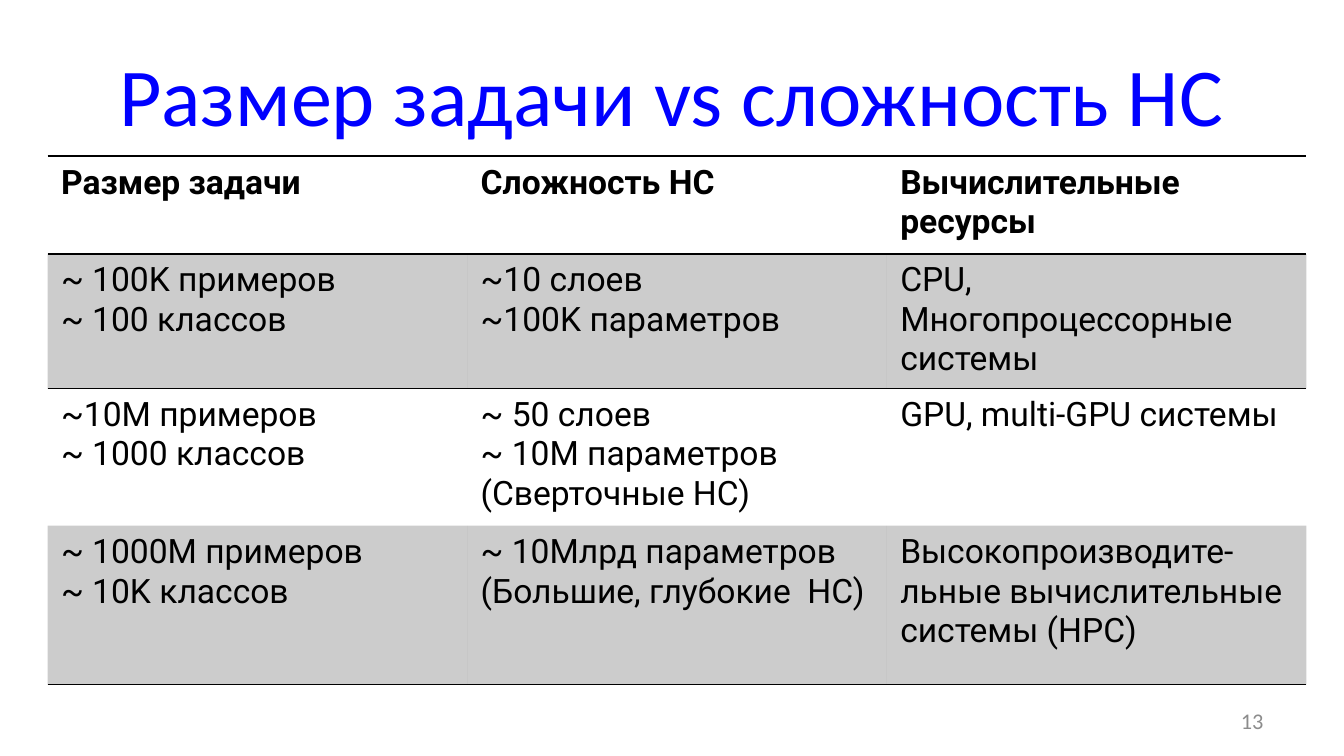
from lxml.etree import SubElement
from pptx import Presentation
from pptx.dml.color import RGBColor
from pptx.enum.text import MSO_ANCHOR, MSO_AUTO_SIZE, PP_ALIGN
from pptx.oxml import parse_xml
from pptx.oxml.ns import nsdecls, qn
from pptx.util import Cm, Pt

TITLE = "Размер задачи vs сложность НС"
PAGE_NUMBER = "13"
HEADER = [["Размер задачи"], ["Сложность НС"], ["Вычислительные ресурсы"]]
BODY = [
    [["~ 100K примеров", "~ 100 классов"],
     ["~10 слоев", "~100K параметров"],
     ["CPU,", "Многопроцессорные системы"]],
    [["~10M примеров", "~ 1000 классов"],
     ["~ 50 слоев", "~ 10M параметров", "(Сверточные НС)"],
     ["GPU, multi-GPU системы"]],
    [["~ 1000M примеров", "~ 10K классов"],
     ["~ 10Mлрд параметров", "(Большие, глубокие  НС)"],
     ["Высокопроизводите-льные вычислительные системы (HPC)"]],
]
ROWS = [HEADER] + BODY
ROW_HEIGHTS = [1.85, 2.54, 2.59, 3.0]
COLUMN_WIDTH = 7.93
BLACK, BLUE, GREY = "000000", "0000FF", "8C8C8C"
BAND_OPACITY = 20
NO_STYLE = "{2D5ABB26-0587-4C30-8999-92F81FD0307C}"


def write(text_frame, lines, font, size, color, bold=False, align=PP_ALIGN.LEFT):
    for index, line in enumerate(lines):
        paragraph = text_frame.add_paragraph() if index else text_frame.paragraphs[0]
        paragraph.alignment = align
        run = paragraph.add_run()
        run.text = line
        run.font.name = font
        run.font.size = Pt(size)
        run.font.bold = bold
        run.font.color.rgb = RGBColor.from_string(color)


def place(shape, left, top, width, height):
    shape.left, shape.top = Cm(left), Cm(top)
    shape.width, shape.height = Cm(width), Cm(height)


def add_rule(cell, side):
    """Draw a 1 pt black border on one side, "T" or "B"; call before filling."""
    cell._tc.get_or_add_tcPr().append(parse_xml(
        f'<a:ln{side} {nsdecls("a")} w="{Pt(1)}"><a:solidFill>'
        f'<a:srgbClr val="{BLACK}"/></a:solidFill></a:ln{side}>'))


def fill_band(cell):
    cell.fill.solid()
    cell.fill.fore_color.rgb = RGBColor.from_string(BLACK)
    color = cell._tc.tcPr.find(qn("a:solidFill")).find(qn("a:srgbClr"))
    SubElement(color, qn("a:alpha"), val=str(BAND_OPACITY * 1000))


def add_comparison_table(slide):
    frame = slide.shapes.add_table(
        len(ROWS), len(HEADER), Cm(0.9), Cm(2.95),
        Cm(COLUMN_WIDTH * len(HEADER)), Cm(sum(ROW_HEIGHTS)))
    table = frame.table
    table._tbl.tblPr.find(qn("a:tableStyleId")).text = NO_STYLE
    for column in table.columns:
        column.width = Cm(COLUMN_WIDTH)
    for row_index, (row, height) in enumerate(zip(ROWS, ROW_HEIGHTS)):
        table.rows[row_index].height = Cm(height)
        for column_index, lines in enumerate(row):
            cell = table.cell(row_index, column_index)
            write(cell.text_frame, lines, "Roboto", 18, BLACK, bold=row_index == 0)
            if row_index < 2:
                add_rule(cell, "T")
            if row_index in (0, len(ROWS) - 1):
                add_rule(cell, "B")
            if row_index % 2:
                fill_band(cell)
            else:
                cell.fill.background()


def main():
    presentation = Presentation()
    presentation.slide_width, presentation.slide_height = Cm(25.4), Cm(14.28)
    slide = presentation.slides.add_slide(presentation.slide_layouts[5])

    title = slide.shapes.title
    place(title, 1.27, 0.58, 22.86, 2.39)
    title.text_frame.auto_size = MSO_AUTO_SIZE.NONE
    title.text_frame.vertical_anchor = MSO_ANCHOR.MIDDLE
    write(title.text_frame, [TITLE], "Calibri", 44, BLUE, align=PP_ALIGN.CENTER)

    add_comparison_table(slide)

    number = slide.shapes.add_textbox(Cm(18.2), Cm(13.23), Cm(5.93), Cm(0.76))
    number.text_frame.word_wrap = True
    number.text_frame.vertical_anchor = MSO_ANCHOR.MIDDLE
    write(number.text_frame, [PAGE_NUMBER], "Calibri", 12, GREY, align=PP_ALIGN.RIGHT)

    presentation.save("out.pptx")


if __name__ == "__main__":
    main()
